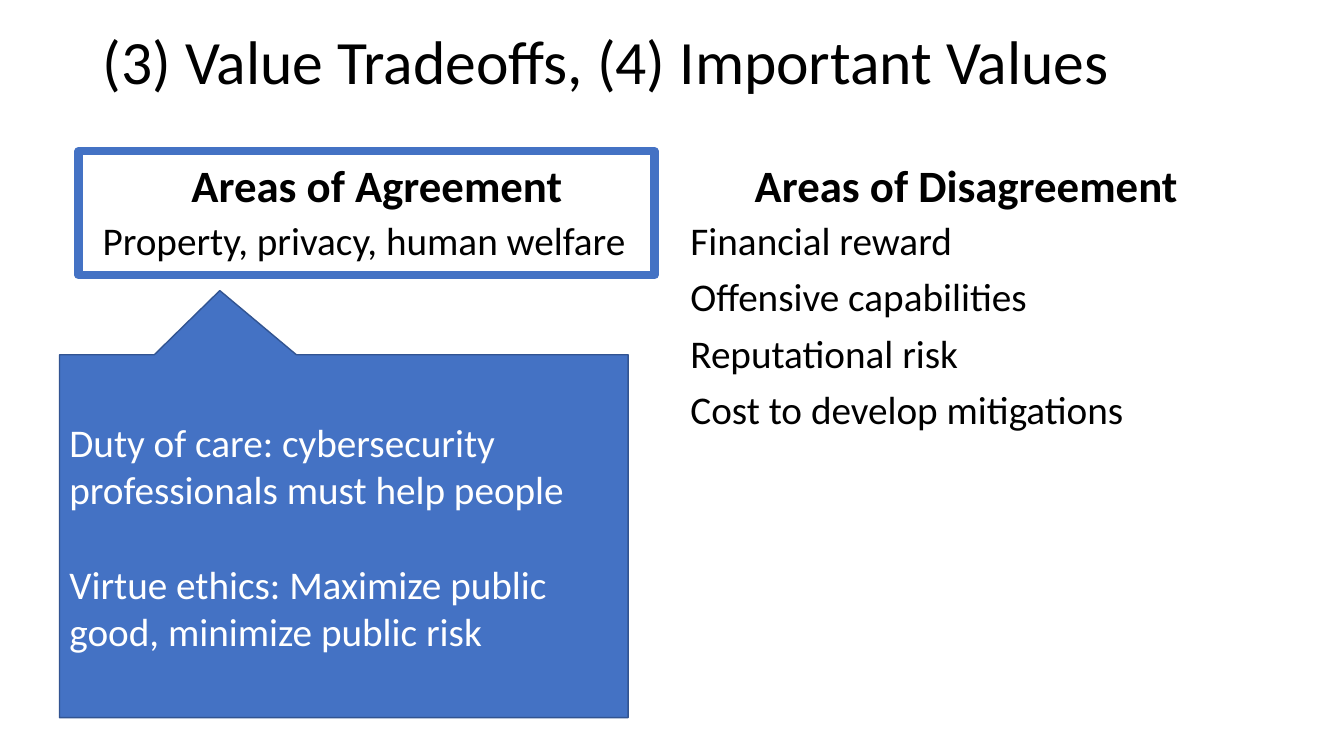
from pptx import Presentation
from pptx.dml.color import RGBColor
from pptx.enum.shapes import MSO_SHAPE
from pptx.enum.text import MSO_ANCHOR, PP_ALIGN
from pptx.util import Inches, Pt

LEFT, CENTER = PP_ALIGN.LEFT, PP_ALIGN.CENTER
TOP, MIDDLE, BOTTOM = MSO_ANCHOR.TOP, MSO_ANCHOR.MIDDLE, MSO_ANCHOR.BOTTOM
PROCESS, CALLOUT = MSO_SHAPE.FLOWCHART_PROCESS, MSO_SHAPE.RECTANGULAR_CALLOUT
FONT = "Calibri"
COLORS = {"text": "000000", "accent": "4472C4", "edge": "325491", "light": "FFFFFF"}


def color(name):
    """Return the named colour."""
    return RGBColor.from_string(COLORS[name])


def write_text(shape, lines, size=28, bold=False, ink="text", align=LEFT,
               anchor=TOP, spacing=0.9, before=10):
    """Fill a shape with one formatted paragraph per line."""
    frame = shape.text_frame
    frame.word_wrap = True
    frame.vertical_anchor = anchor
    for index, line in enumerate(lines):
        paragraph = frame.add_paragraph() if index else frame.paragraphs[0]
        paragraph.alignment = align
        paragraph.line_spacing = spacing
        paragraph.space_before = Pt(before if index else 0)
        run = paragraph.add_run()
        run.text = line
        run.font.name = FONT
        run.font.size = Pt(size)
        run.font.bold = bold
        run.font.color.rgb = color(ink)


def add_text(slide, box, lines, **text_format):
    """Add a text box with formatted lines."""
    shape = slide.shapes.add_textbox(*map(Inches, box))
    write_text(shape, lines, **text_format)


def add_block(slide, kind, box, edge, weight, fill=None):
    """Add an outlined preset shape, filled if a fill is named."""
    shape = slide.shapes.add_shape(kind, *map(Inches, box))
    shape.shadow.inherit = False
    shape.line.color.rgb = color(edge)
    shape.line.width = Pt(weight)
    if fill:
        shape.fill.solid()
        shape.fill.fore_color.rgb = color(fill)
    else:
        shape.fill.background()
    return shape


def add_column(slide, box, heading, items):
    """Place a centred heading above a list of items."""
    left, top, width, height = box
    heading_height = 0.9
    add_text(slide, (left, top, width, heading_height), [heading],
             size=32, bold=True, align=CENTER, anchor=BOTTOM)
    add_text(slide, (left, top + heading_height, width, height - heading_height), items)


def add_ethics_callout(slide, box, principles):
    """Place the callout that points up at the agreed values."""
    callout = add_block(slide, CALLOUT, box, "edge", 1, fill="accent")
    callout.adjustments[0] = -0.218
    callout.adjustments[1] = -0.677
    write_text(callout, principles, ink="light", anchor=MIDDLE, spacing=1.0, before=34)


def main():
    """Build and save the slide."""
    presentation = Presentation()
    presentation.slide_width = Inches(13.33)
    presentation.slide_height = Inches(7.5)
    slide = presentation.slides.add_slide(presentation.slide_layouts[6])
    add_text(slide, (0.92, 0.15, 11.5, 0.98),
             ["(3) Value Tradeoffs, (4) Important Values"], size=44, anchor=MIDDLE)
    add_column(slide, (0.92, 1.25, 5.64, 5.66), "Areas of Agreement",
               ["Property, privacy, human welfare"])
    add_column(slide, (6.75, 1.25, 5.67, 5.66), "Areas of Disagreement",
               ["Financial reward", "Offensive capabilities",
                "Reputational risk", "Cost to develop mitigations"])
    add_block(slide, PROCESS, (0.78, 1.5, 5.71, 1.23), "accent", 6)
    add_ethics_callout(slide, (0.59, 3.52, 5.64, 3.6),
                       ["Duty of care: cybersecurity professionals must help people",
                        "Virtue ethics: Maximize public good, minimize public risk"])
    presentation.save("out.pptx")


if __name__ == "__main__":
    main()
